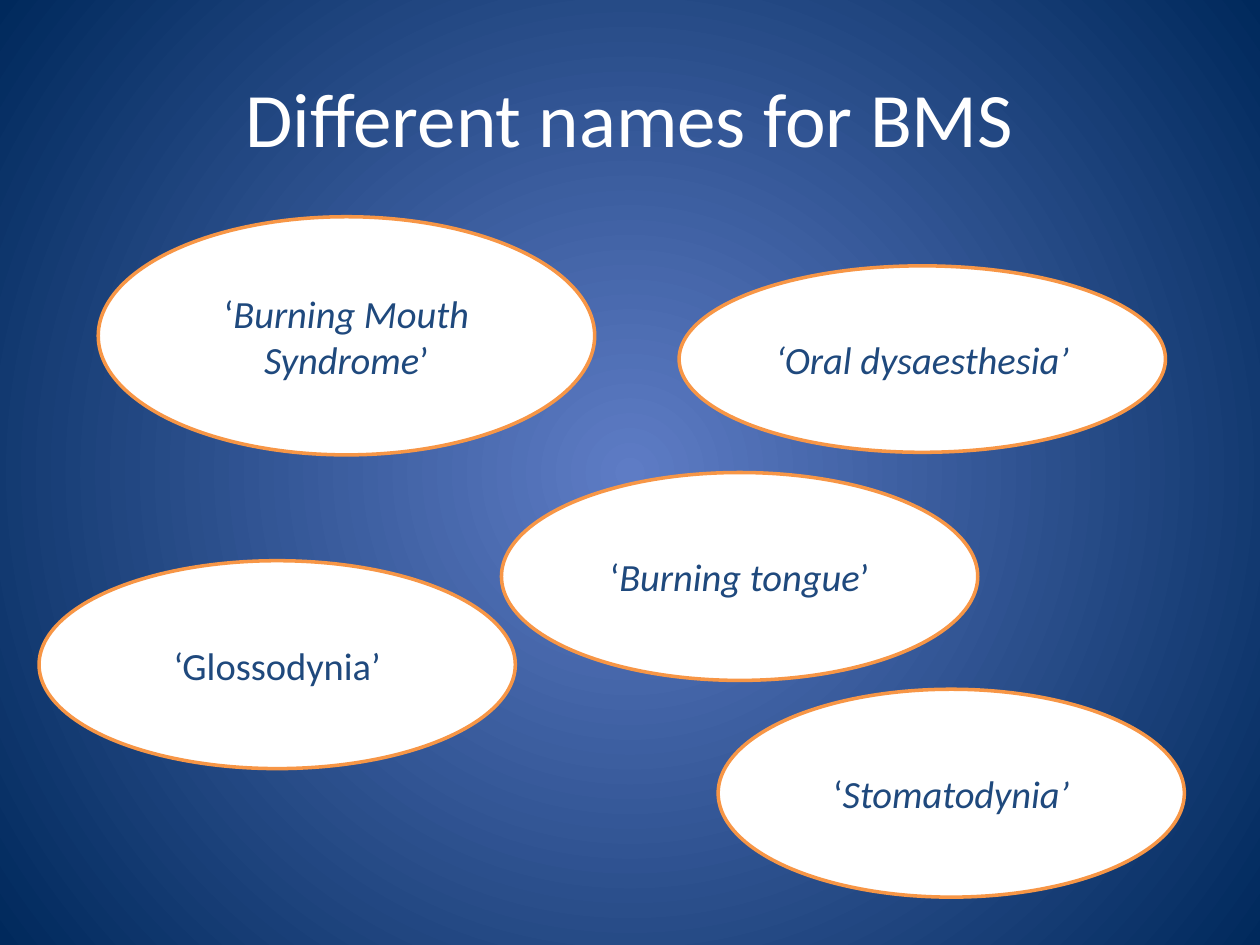
from dataclasses import dataclass

from lxml.etree import SubElement as Sub
from pptx import Presentation
from pptx.dml.color import RGBColor as Rgb
from pptx.enum.shapes import MSO_SHAPE as Kind
from pptx.enum.text import MSO_ANCHOR as Anchor, PP_ALIGN as Align
from pptx.oxml.ns import qn
from pptx.util import Inches, Pt

WIDE, HIGH = Inches(10), Inches(7.5)
COLS, ROWS = 100, 75
HUES = {
    "glow": "5E7CC5",
    "deep": "00295C",
    "white": "FFFFFF",
    "rim": "F79646",
    "ink": "1F497D",
}


@dataclass
class Box:
    col: float
    row: float
    cols: float
    rows: float

    def place(self) -> tuple[int, int, int, int]:
        wide, high = WIDE / COLS, HIGH / ROWS
        return (round(self.col * wide), round(self.row * high),
                round(self.cols * wide), round(self.rows * high))


@dataclass
class Name:
    box: Box
    runs: list[tuple[str, bool]]


NAMES = [
    Name(Box(3.1, 44.5, 37.8, 16.5), [("‘Glossodynia’", False)]),
    Name(Box(57, 54.7, 37, 16.5), [("‘", False), ("Stomatodynia’", True)]),
    Name(Box(53.9, 21.1, 38.6, 14.8), [("‘Oral dysaesthesia’", True)]),
    Name(Box(7.8, 17.2, 39.4, 18.9),
         [("‘", False), ("Burning Mouth Syndrome", True), ("’", False)]),
    Name(Box(39.8, 37.5, 37.8, 16.5),
         [("‘", False), ("Burning tongue", True), ("’", False)]),
]


def hue(name: str) -> Rgb:
    return Rgb.from_string(HUES[name])


def write(shape, runs: list[tuple[str, bool]], *, size: float, ink: str) -> None:
    frame = shape.text_frame
    frame.word_wrap = True
    frame.vertical_anchor = Anchor.MIDDLE
    para = frame.paragraphs[0]
    para.alignment = Align.CENTER
    for text, slant in runs:
        run = para.add_run()
        run.text = text
        font = run.font
        font.name, font.size, font.italic = "Calibri", Pt(size), slant
        font.color.rgb = hue(ink)


def paint(slide) -> None:
    fill = slide.background.fill
    fill.gradient()
    for stop, name, spot in zip(fill.gradient_stops, ("glow", "deep"), (0, 1)):
        stop.color.rgb = hue(name)
        stop.position = spot
    grad = next(slide.element.iter(qn("a:gradFill")))
    grad.remove(grad.find(qn("a:lin")))
    ring = Sub(grad, qn("a:path"), path="circle")
    Sub(ring, qn("a:fillToRect"), dict.fromkeys("ltrb", "50000"))


def draw(slide, name: Name) -> None:
    oval = slide.shapes.add_shape(Kind.OVAL, *name.box.place())
    oval.shadow.inherit = False
    oval.fill.solid()
    oval.fill.fore_color.rgb = hue("white")
    oval.line.color.rgb = hue("rim")
    oval.line.width = Pt(2)
    write(oval, name.runs, size=22, ink="ink")


def main() -> None:
    deck = Presentation()
    deck.slide_width, deck.slide_height = WIDE, HIGH
    slide = deck.slides.add_slide(deck.slide_layouts[6])
    paint(slide)
    title = slide.shapes.add_textbox(*Box(5, 3, 90, 12.5).place())
    write(title, [("Different names for BMS", False)], size=44, ink="white")
    for name in NAMES:
        draw(slide, name)
    deck.save("out.pptx")


if __name__ == "__main__":
    main()
